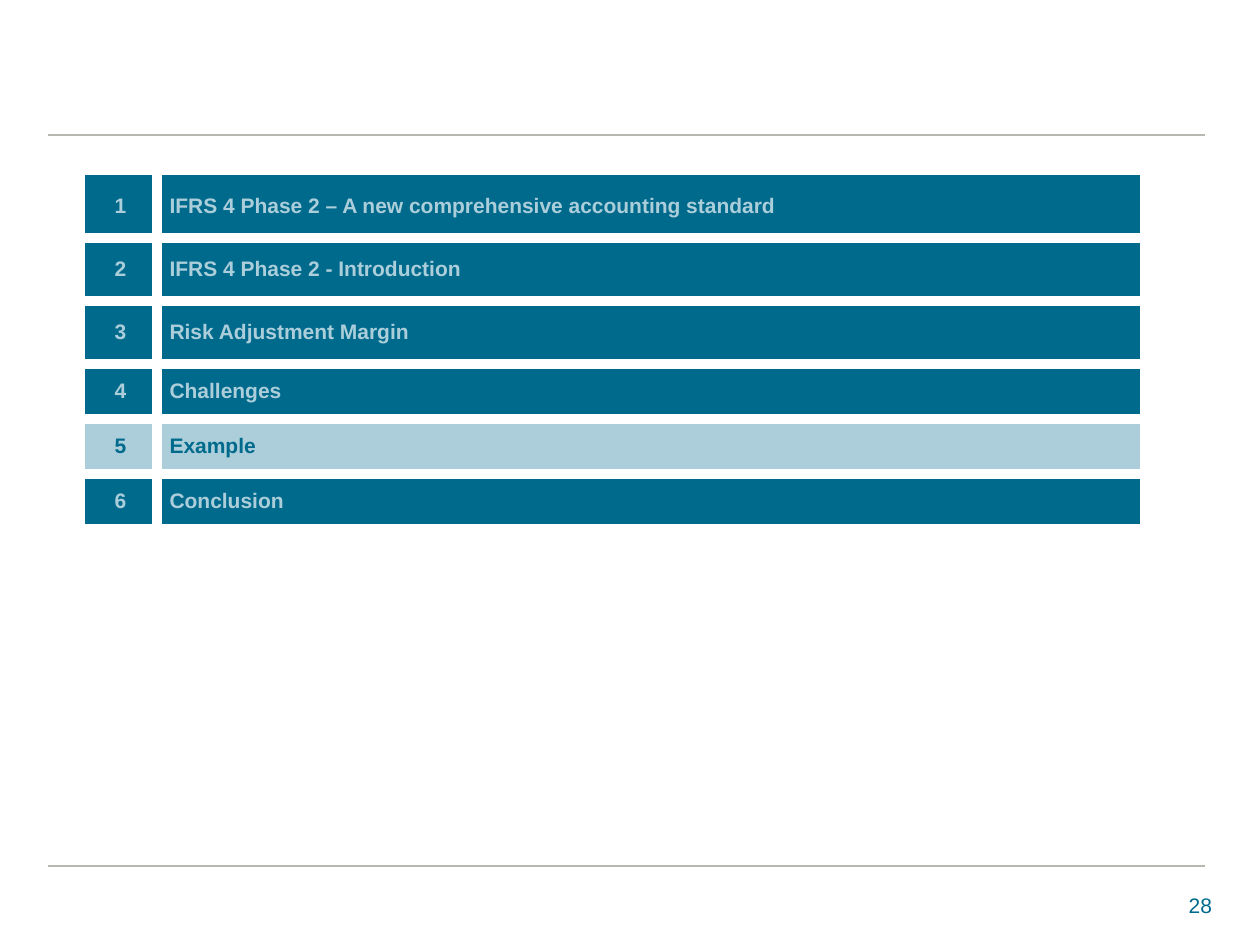
from dataclasses import dataclass

from lxml.etree import SubElement
from pptx import Presentation
from pptx.dml.color import RGBColor
from pptx.enum.shapes import MSO_CONNECTOR
from pptx.enum.text import MSO_ANCHOR, PP_ALIGN
from pptx.oxml.ns import qn
from pptx.slide import Slide
from pptx.table import _Cell
from pptx.text.text import _Paragraph
from pptx.util import Emu, Inches, Pt

PIXELS_PER_INCH = 126


@dataclass(frozen=True)
class Theme:
    font: str = "Arial"
    text_size: int = 12
    dark: str = "006A8D"
    light: str = "ABCEDA"
    rule: str = "B7B8B1"
    rule_width: float = 0.75
    border: str = "FFFFFF"
    outer_border: int = 1
    inner_border: int = 6


@dataclass(frozen=True)
class AgendaItem:
    title: str
    height: int
    current: bool = False


THEME = Theme()
AGENDA = [
    AgendaItem("IFRS 4 Phase 2 – A new comprehensive accounting standard", 64),
    AgendaItem("IFRS 4 Phase 2 - Introduction", 63),
    AgendaItem("Risk Adjustment Margin", 63),
    AgendaItem("Challenges", 55),
    AgendaItem("Example", 55, current=True),
    AgendaItem("Conclusion", 55),
]
COLUMN_WIDTHS = (73, 984)
HANGING_INDENT = 48


def px(pixels: int) -> Emu:
    return Emu(round(pixels * Inches(1) / PIXELS_PER_INCH))


def format_text(paragraph: _Paragraph, color: str, bold: bool, alignment: PP_ALIGN) -> None:
    paragraph.alignment = alignment
    for run in paragraph.runs:
        run.font.name = THEME.font
        run.font.size = Pt(THEME.text_size)
        run.font.bold = bold
        run.font.color.rgb = RGBColor.from_string(color)


def add_rule(slide: Slide, top: int) -> None:
    line = slide.shapes.add_connector(
        MSO_CONNECTOR.STRAIGHT, px(48), px(top), px(1205), px(top))
    line.line.color.rgb = RGBColor.from_string(THEME.rule)
    line.line.width = Pt(THEME.rule_width)
    SubElement(line._element.spPr, qn("a:effectLst"))


def add_page_number(slide: Slide, number: int) -> None:
    box = slide.shapes.add_textbox(px(937), px(886), px(275), px(38))
    text_frame = box.text_frame
    text_frame.word_wrap = True
    text_frame.margin_right = 0
    text_frame.text = str(number)
    format_text(text_frame.paragraphs[0], THEME.dark, False, PP_ALIGN.RIGHT)


def set_borders(cell: _Cell, outer_sides: dict[str, bool]) -> None:
    """Draw thin borders on the table's outer sides and wide ones between cells."""
    properties = cell._tc.get_or_add_tcPr()
    for side, is_outer in outer_sides.items():
        width = THEME.outer_border if is_outer else THEME.inner_border
        border = SubElement(properties, qn(f"a:ln{side}"), w=str(Pt(width)))
        fill = SubElement(border, qn("a:solidFill"))
        SubElement(fill, qn("a:srgbClr"), val=THEME.border)


def fill_cell(cell: _Cell, text: str, current: bool, alignment: PP_ALIGN) -> None:
    background, foreground = (
        (THEME.light, THEME.dark) if current else (THEME.dark, THEME.light))
    cell.fill.solid()
    cell.fill.fore_color.rgb = RGBColor.from_string(background)
    cell.vertical_anchor = MSO_ANCHOR.MIDDLE
    cell.text_frame.text = text
    paragraph = cell.text_frame.paragraphs[0]
    paragraph_properties = paragraph._p.get_or_add_pPr()
    paragraph_properties.set("marL", str(px(HANGING_INDENT)))
    paragraph_properties.set("indent", str(-px(HANGING_INDENT)))
    format_text(paragraph, foreground, True, alignment)


def add_agenda(slide: Slide, items: list[AgendaItem]) -> None:
    table = slide.shapes.add_table(
        len(items), len(COLUMN_WIDTHS), px(84), px(174),
        px(sum(COLUMN_WIDTHS)), px(sum(item.height for item in items))).table
    table.first_row = False
    table.horz_banding = False
    for column, width in zip(table.columns, COLUMN_WIDTHS):
        column.width = px(width)
    for row_index, item in enumerate(items):
        table.rows[row_index].height = px(item.height)
        contents = ((str(row_index + 1), PP_ALIGN.CENTER), (item.title, PP_ALIGN.LEFT))
        for column_index, (text, alignment) in enumerate(contents):
            cell = table.cell(row_index, column_index)
            set_borders(cell, {
                "L": column_index == 0,
                "R": column_index == len(COLUMN_WIDTHS) - 1,
                "T": row_index == 0,
                "B": False,
            })
            fill_cell(cell, text, item.current, alignment)


def main() -> None:
    presentation = Presentation()
    presentation.slide_width = px(1260)
    presentation.slide_height = px(945)
    slide = presentation.slides.add_slide(presentation.slide_layouts[6])
    for top in (135, 866):
        add_rule(slide, top)
    add_page_number(slide, 28)
    add_agenda(slide, AGENDA)
    presentation.save("out.pptx")


if __name__ == "__main__":
    main()
